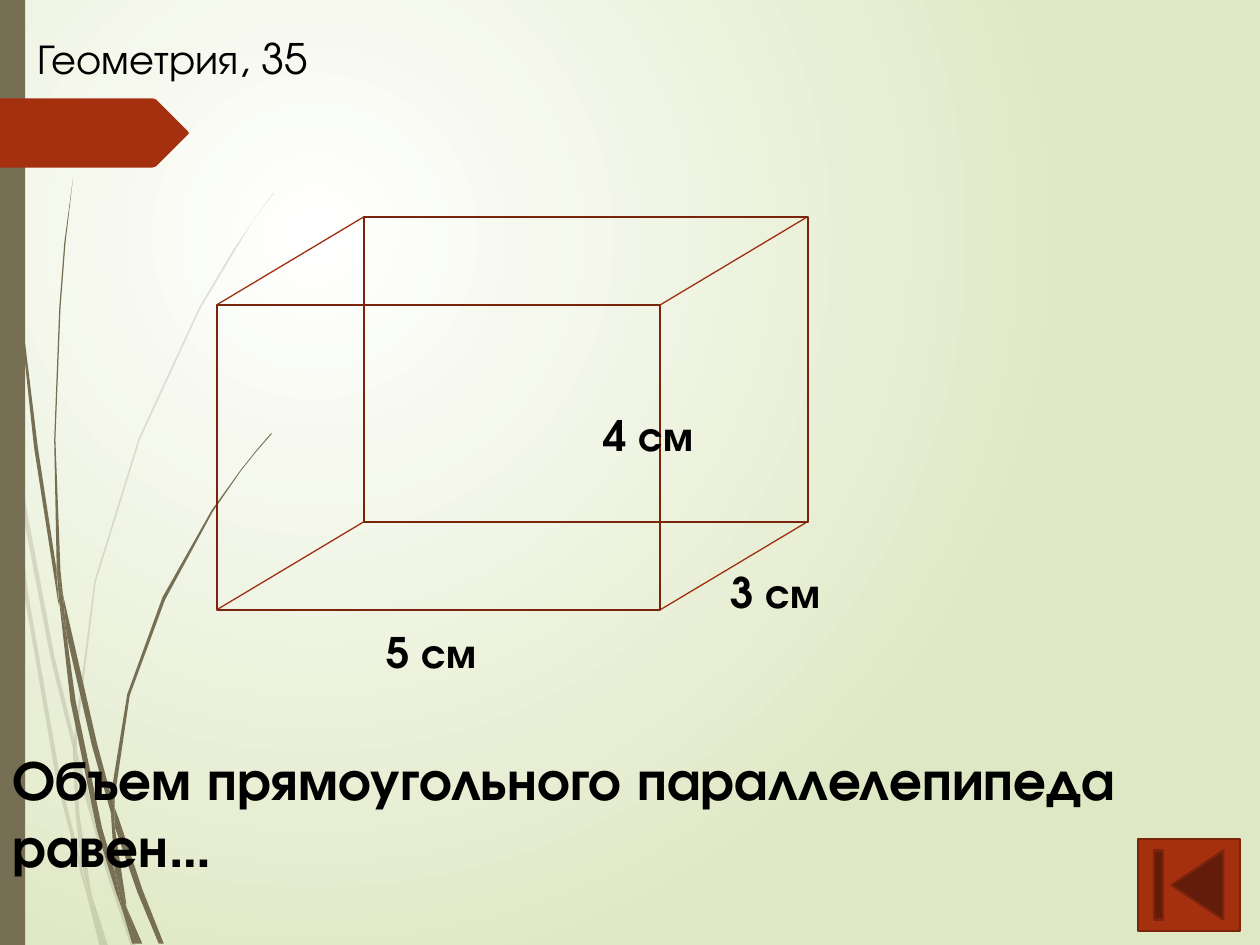
from lxml import etree
from pptx import Presentation
from pptx.dml.color import RGBColor
from pptx.enum.shapes import MSO_CONNECTOR, MSO_SHAPE
from pptx.enum.text import MSO_AUTO_SIZE
from pptx.oxml.ns import qn
from pptx.util import Inches, Pt

RECT = MSO_SHAPE.RECTANGLE
BUTTON = MSO_SHAPE.ACTION_BUTTON_BEGINNING
STRAIGHT = MSO_CONNECTOR.STRAIGHT
GROW = MSO_AUTO_SIZE.SHAPE_TO_FIT_TEXT

WHITE = RGBColor(0xFF, 0xFF, 0xFF)
GREEN = RGBColor(0xDF, 0xE8, 0xC4)
OLIVE = RGBColor(0x76, 0x6F, 0x54)
RED = RGBColor(0xA5, 0x30, 0x10)
MAROON = RGBColor(0x7A, 0x24, 0x0C)
RUST = RGBColor(0x9E, 0x2E, 0x0F)
BLACK = RGBColor(0, 0, 0)

# Text, left, top, width, height, format
PLAIN = {"name": "TeX Gyre Adventor", "size": Pt(24), "bold": False}
BOLD = {**PLAIN, "bold": True}
LARGE = {**BOLD, "size": Pt(32)}
TITLE = ("Геометрия, 35", 0.2, 0.21, 2.6, 0.5, PLAIN)
LABELS = [
    ("4 см", 4.69, 3.2, 1.02, 0.5, BOLD),
    ("5 см", 2.97, 4.92, 1.02, 0.5, BOLD),
    ("3 см", 5.7, 4.45, 1.02, 0.5, BOLD),
    ("Объем прямоугольного параллелепипеда равен…", 0, 5.86, 10.04, 0.64, LARGE),
]

# Box: front face, and the shift to the back face
LEFT, TOP, WIDE, HIGH = 1.72, 2.42, 3.52, 2.42
SHIFT_X, SHIFT_Y = 1.17, -0.7

FLAG = [(0, 0.78), (1.21, 0.78), (1.24, 0.79), (1.49, 1.04), (1.5, 1.06),
        (1.49, 1.07), (1.24, 1.32), (1.21, 1.33), (0, 1.33)]

# Outlines of the grass blades
PALE = [
    [(0.08, 3.5), (0.06, 3.22), (0, 2.82), (0, 2.99), (0.07, 3.44)],
    [(0.4, 5.22), (0.59, 5.99), (0.59, 5.86), (0.43, 5.2), (0.1, 3.45), (0.12, 3.76)],
    [(0.64, 6.07), (0.61, 5.96), (0.61, 6.1), (0.85, 6.94), (1.04, 7.51),
     (1.08, 7.51), (0.88, 6.92)],
    [(0.83, 7.51), (0.86, 7.51), (0.73, 7.11)],
    [(0.64, 6.83), (0.48, 6.19), (0.22, 4.69), (0.12, 3.76), (0.08, 3.5),
     (0.19, 4.7), (0.45, 6.21), (0.64, 6.93), (0.7, 7.14), (0.69, 7.07)],
    [(0.58, 5.99), (0.6, 6.46), (0.64, 6.83), (0.67, 6.92), (0.73, 7.11),
     (0.72, 7.06), (0.63, 6.46), (0.61, 6.1), (0.61, 6.08)],
    [(0.61, 5.84), (0.76, 4.62), (1.11, 3.49), (1.59, 2.45), (1.87, 1.98),
     (2.01, 1.75), (2.17, 1.54), (2.17, 1.53), (2.01, 1.75), (1.86, 1.97),
     (1.58, 2.44), (1.1, 3.48), (0.75, 4.61), (0.59, 5.84), (0.59, 5.86), (0.61, 5.96)],
    [(0.7, 7.14), (0.79, 7.51), (0.82, 7.51)],
    [(0.61, 6.08), (0.61, 6.1), (0.61, 5.96), (0.59, 5.86), (0.58, 5.99)],
    [(0.67, 6.92), (0.65, 6.83), (0.69, 7.07), (0.7, 7.14), (0.82, 7.51),
     (0.83, 7.51), (0.73, 7.11)],
]
DARK = [
    [(0.05, 1.1), (0.14, 2.33), (0.27, 3.55), (0.46, 4.77), (0.47, 4.81),
     (0.45, 4.57), (0.45, 4.53), (0.3, 3.55), (0.15, 2.32), (0.06, 1.09),
     (0.04, 0.48), (0.03, 0), (0.02, 0), (0.03, 0.48)],
    [(0.73, 5.92), (0.88, 6.45), (0.88, 6.31), (0.77, 5.9), (0.5, 4.72), (0.53, 5.05)],
    [(0.94, 6.49), (0.91, 6.41), (0.91, 6.56), (1.09, 7.08), (1.26, 7.49),
     (1.3, 7.49), (1.13, 7.06)],
    [(0.91, 6.91), (0.81, 6.57), (0.6, 5.56), (0.53, 5.05), (0.47, 4.77),
     (0.56, 5.57), (0.77, 6.59), (0.92, 7.08), (0.97, 7.22), (0.96, 7.17)],
    [(0.5, 4.72), (0.48, 4.53), (0.44, 3.49), (0.48, 2.45), (0.52, 1.93),
     (0.58, 1.41), (0.51, 1.93), (0.47, 2.45), (0.43, 3.49), (0.45, 4.49), (0.49, 4.72)],
    [(1.1, 7.49), (1.13, 7.49), (1, 7.19)],
    [(0.47, 4.77), (0.53, 5.05), (0.5, 4.72), (0.49, 4.72), (0.45, 4.49), (0.45, 4.53)],
    [(0.91, 6.33), (1.03, 5.52), (1.31, 4.76), (1.69, 4.06), (1.91, 3.74),
     (2.03, 3.59), (2.16, 3.44), (2.15, 3.44), (2.03, 3.58), (1.91, 3.73),
     (1.68, 4.05), (1.29, 4.74), (1.01, 5.51), (0.88, 6.31), (0.91, 6.41)],
    [(0.97, 7.22), (1.05, 7.49), (1.08, 7.49)],
    [(0.88, 6.45), (0.91, 6.91), (0.96, 7.06), (1, 7.19), (1, 7.16),
     (0.91, 6.56), (0.9, 6.51)],
    [(0.88, 6.45), (0.9, 6.51), (0.91, 6.56), (0.91, 6.41), (0.88, 6.31)],
    [(0.96, 7.06), (0.91, 6.91), (0.96, 7.17), (0.97, 7.22), (1.08, 7.49),
     (1.1, 7.49), (1, 7.19)],
]


def paint(shape, fill=None, line=None, alpha=None):
    shape.shadow.inherit = False
    if fill is None:
        shape.fill.background()
    else:
        shape.fill.solid()
        shape.fill.fore_color.rgb = fill
    if alpha:
        tone = shape.fill._xPr.find(qn("a:solidFill"))[0]
        etree.SubElement(tone, qn("a:alpha"), val=str(alpha * 1000))
    if line is None:
        shape.line.fill.background()
    else:
        shape.line.color.rgb = line
        shape.line.width = Pt(1.25)


def add_form(shapes, points, fill, alpha=None):
    first, *rest = [(Inches(x), Inches(y)) for x, y in points]
    form = shapes.build_freeform(*first)
    form.add_line_segments(rest, close=True)
    paint(form.convert_to_shape(), fill, alpha=alpha)


def add_box(shapes, kind, place, fill=None, line=None):
    paint(shapes.add_shape(kind, *map(Inches, place)), fill, line)


def add_edge(shapes, x, y):
    """Join a front corner to its back corner."""
    ends = (x, y, x + SHIFT_X, y + SHIFT_Y)
    edge = shapes.add_connector(STRAIGHT, *map(Inches, ends))
    edge.line.color.rgb = RUST
    edge.line.width = Pt(0.75)
    etree.SubElement(edge._element.spPr, qn("a:effectLst"))


def add_text(shapes, text, *rest):
    *place, look = rest
    frame = shapes.add_textbox(*map(Inches, place)).text_frame
    frame.word_wrap = True
    frame.auto_size = GROW
    run = frame.paragraphs[0].add_run()
    run.text = text
    run.font.color.rgb = BLACK
    for key, value in look.items():
        setattr(run.font, key, value)


def set_back(slide):
    """Fill the background with a round gradient from the upper left."""
    fill = slide.background.fill
    fill.gradient()
    for stop, tone in zip(fill.gradient_stops, (WHITE, GREEN)):
        stop.color.rgb = tone
    grad = slide._element.find(".//" + qn("a:gradFill"))
    grad.remove(grad.find(qn("a:lin")))
    round_path = etree.SubElement(grad, qn("a:path"), path="circle")
    etree.SubElement(round_path, qn("a:fillToRect"),
                     l="50000", t="50000", r="100000", b="100000")


def main():
    deck = Presentation()
    deck.slide_width, deck.slide_height = Inches(10), Inches(7.5)
    slide = deck.slides.add_slide(deck.slide_layouts[6])
    shapes = slide.shapes
    set_back(slide)

    for blades, alpha in ((PALE, 20), (DARK, None)):
        group = shapes.add_group_shape()
        for blade in blades:
            add_form(group.shapes, blade, OLIVE, alpha)
    add_box(shapes, RECT, (0, 0, 0.2, 7.5), OLIVE)
    add_form(shapes, FLAG, RED)
    add_box(shapes, BUTTON, (9.03, 6.66, 0.81, 0.73), RED, MAROON)
    add_text(shapes, *TITLE)

    add_box(shapes, RECT, (LEFT, TOP, WIDE, HIGH), line=MAROON)
    for x in (LEFT, LEFT + WIDE):
        for y in (TOP, TOP + HIGH):
            add_edge(shapes, x, y)
    add_box(shapes, RECT, (LEFT + SHIFT_X, TOP + SHIFT_Y, WIDE, HIGH), line=MAROON)
    for label in LABELS:
        add_text(shapes, *label)

    deck.save("out.pptx")


if __name__ == "__main__":
    main()
